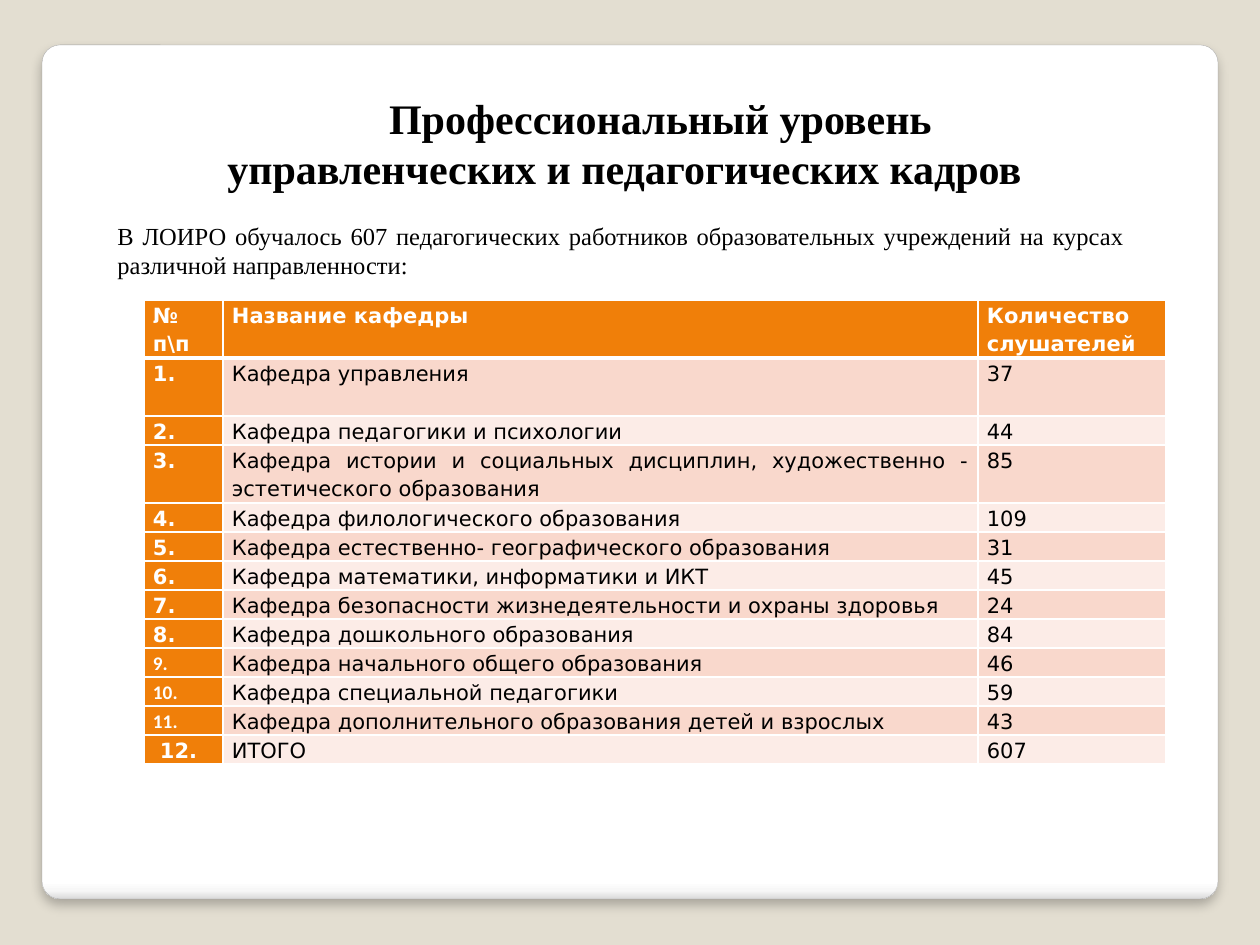
from collections import namedtuple
from dataclasses import dataclass

from lxml import etree
from pptx import Presentation
from pptx.dml.color import RGBColor
from pptx.enum.shapes import MSO_SHAPE as Shape
from pptx.enum.text import MSO_ANCHOR as Anchor, PP_ALIGN as Align
from pptx.oxml import parse_xml
from pptx.oxml.ns import nsdecls, qn
from pptx.util import Pt

EMU_PER_PX = 914400 / 126
Box = namedtuple("Box", "left top width height")


@dataclass(frozen=True)
class Theme:
    page: str = "E3DED1"
    card_edge: str = "A4A4A4"
    card_stops: tuple = ((0, "FFFFFF"), (98, "FFFFFF"), (99, "F7F7F7"), (100, "DADADA"))
    accent: str = "F07F09"
    bands: tuple = ("F9D8CC", "FCECE7")
    light: str = "FFFFFF"
    dark: str = "000000"
    serif: str = "Times New Roman"
    sans: str = "DejaVu Sans"
    compact: str = "Calibri"
    title_size: int = 24
    intro_size: int = 14
    table_size: int = 12
    compact_size: int = 11


THEME = Theme()
TITLE = ("Профессиональный уровень", "управленческих и педагогических кадров")
INTRO = ("В ЛОИРО обучалось 607 педагогических работников "
         "образовательных учреждений на курсах различной направленности:")
HEADINGS = ("№ п\\п", "Название кафедры", "Количество слушателей")
DEPARTMENTS = (
    ("Кафедра управления", 37),
    ("Кафедра педагогики и психологии", 44),
    ("Кафедра истории и социальных дисциплин, художественно - эстетического образования", 85),
    ("Кафедра филологического образования", 109),
    ("Кафедра естественно- географического образования", 31),
    ("Кафедра математики, информатики и ИКТ", 45),
    ("Кафедра безопасности жизнедеятельности и охраны здоровья", 24),
    ("Кафедра дошкольного образования", 84),
    ("Кафедра начального общего образования", 46),
    ("Кафедра специальной педагогики", 59),
    ("Кафедра дополнительного образования детей и взрослых", 43),
    ("ИТОГО", 607),
)
COLUMN_WIDTHS = (79, 755, 188)
LINE_HEIGHT = 29
TALL_ROWS = (0, 1, 3)
COMPACT_ROWS = (9, 10, 11)
TOTAL_ROW = len(DEPARTMENTS)


def px(length):
    return round(length * EMU_PER_PX)


def emu(box):
    return [px(length) for length in box]


def style(para, face, size, color, bold=False, align=Align.JUSTIFY, indent=0):
    para.alignment = align
    para.font.name = face
    para.font.size = Pt(size)
    para.font.bold = bold
    para.font.color.rgb = RGBColor.from_string(color)
    if indent:
        para._p.get_or_add_pPr().set("indent", str(px(indent)))


def add_card(page, box):
    card = page.shapes.add_shape(Shape.ROUNDED_RECTANGLE, *emu(box))
    card.adjustments[0] = 0.021
    card.line.color.rgb = RGBColor.from_string(THEME.card_edge)
    card.line.width = Pt(0.16)
    stops = "".join(
        f'<a:gs pos="{position * 1000}"><a:srgbClr val="{color}"/></a:gs>'
        for position, color in THEME.card_stops)
    properties = card._element.spPr
    properties.find(qn("a:prstGeom")).addnext(parse_xml(
        f'<a:gradFill {nsdecls("a")} rotWithShape="1"><a:gsLst>{stops}</a:gsLst>'
        '<a:lin ang="5400000" scaled="0"/></a:gradFill>'))
    properties.find(qn("a:ln")).addnext(parse_xml(
        f'<a:effectLst {nsdecls("a")}>'
        f'<a:outerShdw blurRad="{Pt(6)}" dist="{Pt(4)}" dir="5400000" rotWithShape="0">'
        f'<a:srgbClr val="{THEME.dark}"><a:alpha val="25000"/></a:srgbClr>'
        '</a:outerShdw></a:effectLst>'))


def add_text_frame(page, box):
    frame = page.shapes.add_textbox(*emu(box)).text_frame
    frame.word_wrap = True
    return frame


def add_title(page, box):
    frame = add_text_frame(page, box)
    frame.text = "\n".join(TITLE)
    for para, indent in zip(frame.paragraphs, (72, 0)):
        style(para, THEME.serif, THEME.title_size, THEME.dark, True, Align.CENTER, indent)


def add_intro(page, box):
    frame = add_text_frame(page, box)
    frame.vertical_anchor = Anchor.MIDDLE
    frame.text = INTRO
    style(frame.paragraphs[0], THEME.serif, THEME.intro_size, THEME.dark)


def set_borders(cell, top, bottom):
    properties = cell._tc.get_or_add_tcPr()
    for index, (side, width) in enumerate(zip("LRTB", (1, 1, top, bottom))):
        line = etree.Element(qn(f"a:ln{side}"), w=str(Pt(width)))
        fill = etree.SubElement(line, qn("a:solidFill"))
        etree.SubElement(fill, qn("a:srgbClr"), val=THEME.light)
        properties.insert(index, line)


def fill_cell(cell, text, row, column):
    strong = row == 0 or column == 0
    compact = column == 0 and row in COMPACT_ROWS
    cell.margin_left = cell.margin_right = px(9)
    cell.margin_top = cell.margin_bottom = 0
    cell.fill.solid()
    color = THEME.accent if strong else THEME.bands[(row - 1) % 2]
    cell.fill.fore_color.rgb = RGBColor.from_string(color)
    set_borders(cell, 3 if row == 1 else 1, 3 if row == 0 else 1)
    cell.text = text
    para = cell.text_frame.paragraphs[0]
    para.line_spacing = 1.15
    style(para,
          THEME.compact if compact else THEME.sans,
          THEME.compact_size if compact else THEME.table_size,
          THEME.light if strong else THEME.dark,
          bold=strong,
          indent=7 if column == 0 and row == TOTAL_ROW else 0)


def add_department_table(page, box):
    rows = [HEADINGS] + [(f"{number}.", name, str(count))
                         for number, (name, count) in enumerate(DEPARTMENTS, 1)]
    table = page.shapes.add_table(len(rows), len(HEADINGS), *emu(box)).table
    table.horz_banding = False
    for column, width in zip(table.columns, COLUMN_WIDTHS):
        column.width = px(width)
    for row, texts in enumerate(rows):
        table.rows[row].height = px(LINE_HEIGHT * (2 if row in TALL_ROWS else 1))
        for column, text in enumerate(texts):
            fill_cell(table.cell(row, column), text, row, column)


def main():
    deck = Presentation()
    deck.slide_width, deck.slide_height = px(1260), px(945)
    page = deck.slides.add_slide(deck.slide_layouts[6])
    page.background.fill.solid()
    page.background.fill.fore_color.rgb = RGBColor.from_string(THEME.page)
    add_card(page, Box(42, 45, 1176, 854))
    add_title(page, Box(84, 86, 1081, 115))
    table_height = LINE_HEIGHT * (len(DEPARTMENTS) + 1 + len(TALL_ROWS))
    add_department_table(page, Box(144, 300, sum(COLUMN_WIDTHS), table_height))
    add_intro(page, Box(105, 214, 1032, 72))
    deck.save("out.pptx")


if __name__ == "__main__":
    main()
